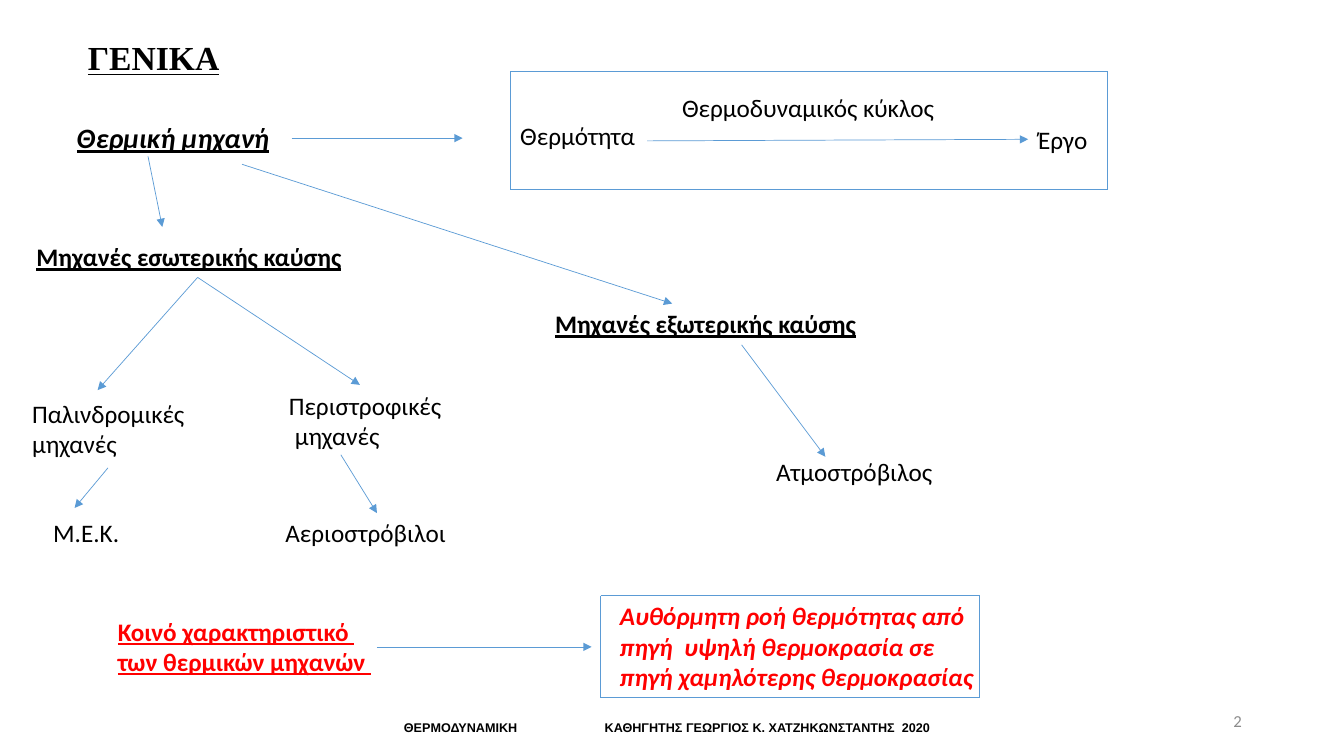
from dataclasses import dataclass
from lxml.etree import SubElement
from pptx import Presentation
from pptx.dml.color import RGBColor
from pptx.enum.shapes import MSO_CONNECTOR
from pptx.enum.text import MSO_ANCHOR, MSO_AUTO_SIZE, PP_ALIGN
from pptx.oxml.ns import qn
from pptx.util import Cm, Pt


@dataclass(frozen=True)
class Theme:
    black: RGBColor = RGBColor(0, 0, 0)
    red: RGBColor = RGBColor(0xFF, 0, 0)
    grey: RGBColor = RGBColor(0x8C, 0x8C, 0x8C)
    blue: RGBColor = RGBColor(0x5B, 0x9B, 0xD5)
    line: float = 0.5
    body: str = "Calibri"
    title: str = "Times New Roman"
    footer: str = "Arial"
    title_size: int = 24
    root_size: int = 20
    body_size: int = 18
    number_size: int = 12
    footer_size: int = 9


T = Theme()

# Text styles: font, size, colour, bold, italic, underline
STYLES = {
    "title": (T.title, T.title_size, T.black, True, False, True),
    "root": (T.body, T.root_size, T.black, True, True, True),
    "branch": (T.body, T.body_size, T.black, True, False, True),
    "plain": (T.body, T.body_size, T.black, False, False, False),
    "common": (T.body, T.body_size, T.red, True, False, True),
    "flow": (T.body, T.body_size, T.red, True, True, False),
    "footer": (T.footer, T.footer_size, T.black, True, False, False),
    "number": (T.body, T.number_size, T.grey, False, False, False),
}

# Content, all lengths in cm
TITLE = "ΓΕΝΙΚΑ"
LABELS = [  # text, style, left, top, width
    ("Θερμότητα", "plain", 12.86, 2.91, 3.45),
    ("Έργο", "plain", 25.91, 3, 2.01),
    ("Θερμοδυναμικός κύκλος", "plain", 16.94, 2.21, 7.75),
    ("Θερμική μηχανή", "root", 1.69, 2.92, 5.66),
    ("Μηχανές εσωτερικής καύσης", "branch", 0.67, 5.96, 8.64),
    ("Μηχανές εξωτερικής καύσης", "branch", 13.74, 7.65, 8.18),
    ("Παλινδρομικές\nμηχανές", "plain", 0.56, 9.91, 4.67),
    ("Περιστροφικές\nμηχανές", "plain", 7.03, 9.7, 4.55),
    ("Ατμοστρόβιλος", "plain", 19.31, 11.38, 6.27),
    ("Μ.Ε.Κ.", "plain", 1.09, 12.92, 2.39),
    ("Αεριοστρόβιλοι", "plain", 6.94, 12.92, 4.83),
    ("Κοινό χαρακτηριστικό \nτων θερμικών μηχανών ", "common", 2.72, 15.4, 7.8),
    ("Αυθόρμητη ροή θερμότητας από\nπηγή  υψηλή θερμοκρασία σε\n"
     "πηγή χαμηλότερης θερμοκρασίας", "flow", 15.37, 15.01, 12.52),
]
FRAMES = [  # left, top, right, bottom
    (12.86, 1.8, 27.9, 4.78),
    (15.14, 15.01, 24.69, 17.58),
]
ARROWS = [  # from x, y, to x, y
    (16.31, 3.55, 25.91, 3.51),
    (7.35, 3.48, 11.66, 3.48),
    (3.73, 3.94, 4.09, 5.72),
    (6.1, 4.14, 16.94, 7.65),
    (4.98, 6.99, 2.46, 9.83),
    (4.98, 6.99, 9.07, 9.7),
    (18.69, 8.69, 20.8, 11.51),
    (2.72, 11.79, 1.88, 12.8),
    (8.59, 11.46, 9.5, 12.93),
    (9.5, 16.3, 14.91, 16.3),
]
FOOTER = "ΘΕΡΜΟΔΥΝΑΜΙΚΗ\tΚΑΘΗΓΗΤΗΣ ΓΕΩΡΓΙΟΣ Κ. ΧΑΤΖΗΚΩΝΣΤΑΝΤΗΣ  2020"
FOOTER_TAB = 5.06
LINE_HEIGHT, PADDING = 0.78, 0.24
SECOND_LINE_INDENT = 0.15


def set_font(font, style):
    font.name, size, font.color.rgb, font.bold, font.italic, font.underline = STYLES[style]
    font.size = Pt(size)


def add_text(s, text, style, left, top, width, height=None):
    lines = text.count("\n") + 1
    height = height or lines * LINE_HEIGHT + PADDING
    sp = s.shapes.add_textbox(Cm(left), Cm(top), Cm(width), Cm(height))
    tf = sp.text_frame
    tf.word_wrap = True
    tf.text = text
    for p in tf.paragraphs:
        for r in p.runs:
            set_font(r.font, style)
    return sp


def add_line(s, *ends):
    sp = s.shapes.add_connector(MSO_CONNECTOR.STRAIGHT, *(Cm(v) for v in ends))
    sp.line.color.rgb = T.blue
    sp.line.width = Pt(T.line)
    SubElement(sp._element.spPr, qn("a:effectLst"))
    return sp


def add_arrow(s, *ends):
    sp = add_line(s, *ends)
    SubElement(sp.line._get_or_add_ln(), qn("a:tailEnd"), type="triangle")


def add_frame(s, left, top, right, bottom):
    for x in (left, right):
        add_line(s, x, top, x, bottom)
    for y in (top, bottom):
        add_line(s, left, y, right, y)


def main():
    prs = Presentation()
    prs.slide_width, prs.slide_height = Cm(33.87), Cm(19.05)
    s = prs.slides.add_slide(prs.slide_layouts[5])

    # Title
    sp = s.shapes.title
    sp.left, sp.top, sp.width, sp.height = Cm(1.96), Cm(0.81), Cm(6.12), Cm(1.27)
    tf = sp.text_frame
    tf.text = TITLE
    tf.vertical_anchor = MSO_ANCHOR.TOP
    tf.auto_size = MSO_AUTO_SIZE.NONE
    p = tf.paragraphs[0]
    p.alignment = PP_ALIGN.LEFT
    set_font(p.runs[0].font, "title")

    # Diagram
    for frame in FRAMES:
        add_frame(s, *frame)
    for label in LABELS:
        sp = add_text(s, *label)
        if label[0].startswith("Περιστροφικές"):
            p = sp.text_frame.paragraphs[1]
            p._p.get_or_add_pPr().set("marL", str(Cm(SECOND_LINE_INDENT)))
    for arrow in ARROWS:
        add_arrow(s, *arrow)

    # Footer, with its second part on a tab stop
    sp = add_text(s, "", "footer", 9.93, 18.01, 14.5, 0.64)
    p = sp.text_frame.paragraphs[0]
    tabs = SubElement(p._p.get_or_add_pPr(), qn("a:tabLst"))
    SubElement(tabs, qn("a:tab"), pos=str(Cm(FOOTER_TAB)), algn="l")
    p.text = FOOTER
    set_font(p.runs[0].font, "footer")

    # Slide number as a field
    sp = add_text(s, "", "number", 23.93, 17.65, 7.62, 1.02)
    sp.text_frame.vertical_anchor = MSO_ANCHOR.MIDDLE
    p = sp.text_frame.paragraphs[0]
    p.alignment = PP_ALIGN.RIGHT
    r = p.add_run()
    r.text = "2"
    set_font(r.font, "number")
    field = SubElement(p._p, qn("a:fld"), type="slidenum",
                       id="{B6F15528-21DE-4FAA-801E-634DDDAF4B2B}")
    field.extend(list(r._r))
    p._p.remove(r._r)
    prs.slides._sldIdLst.getparent().set("firstSlideNum", "2")

    prs.save("out.pptx")


if __name__ == "__main__":
    main()
